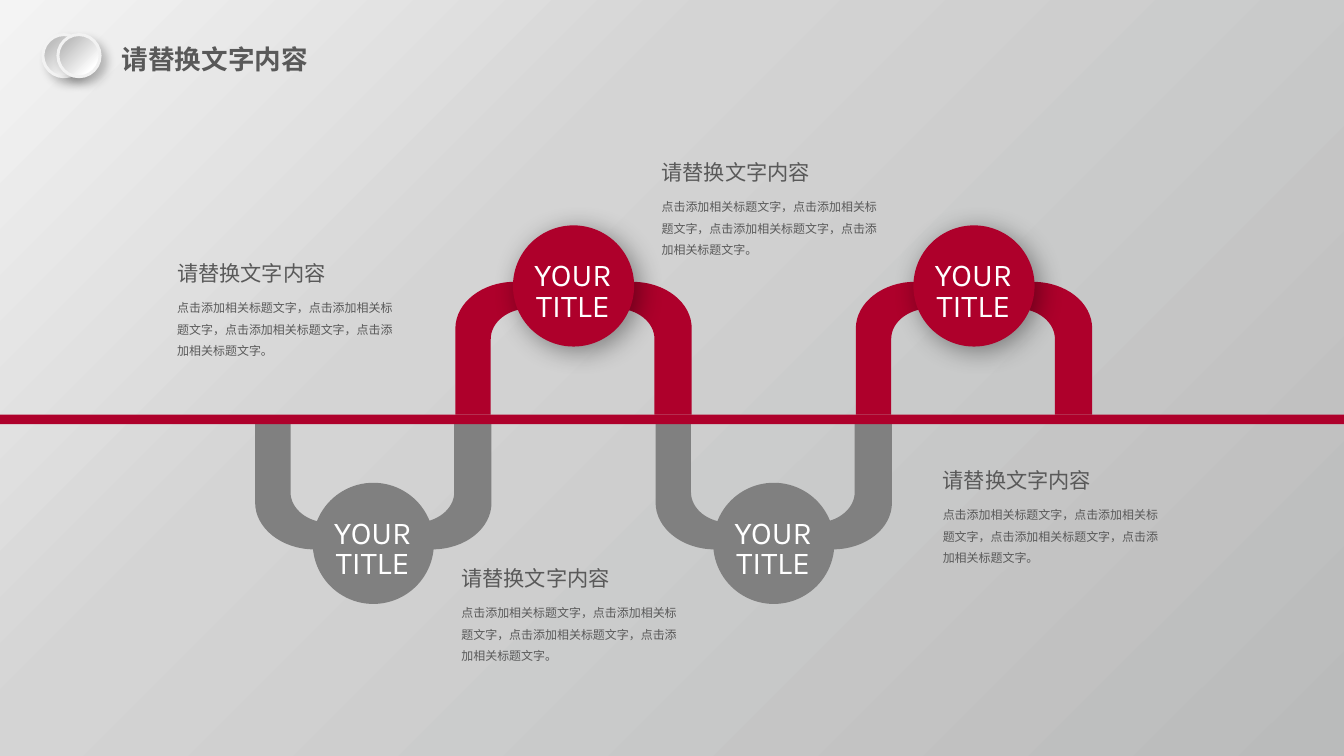
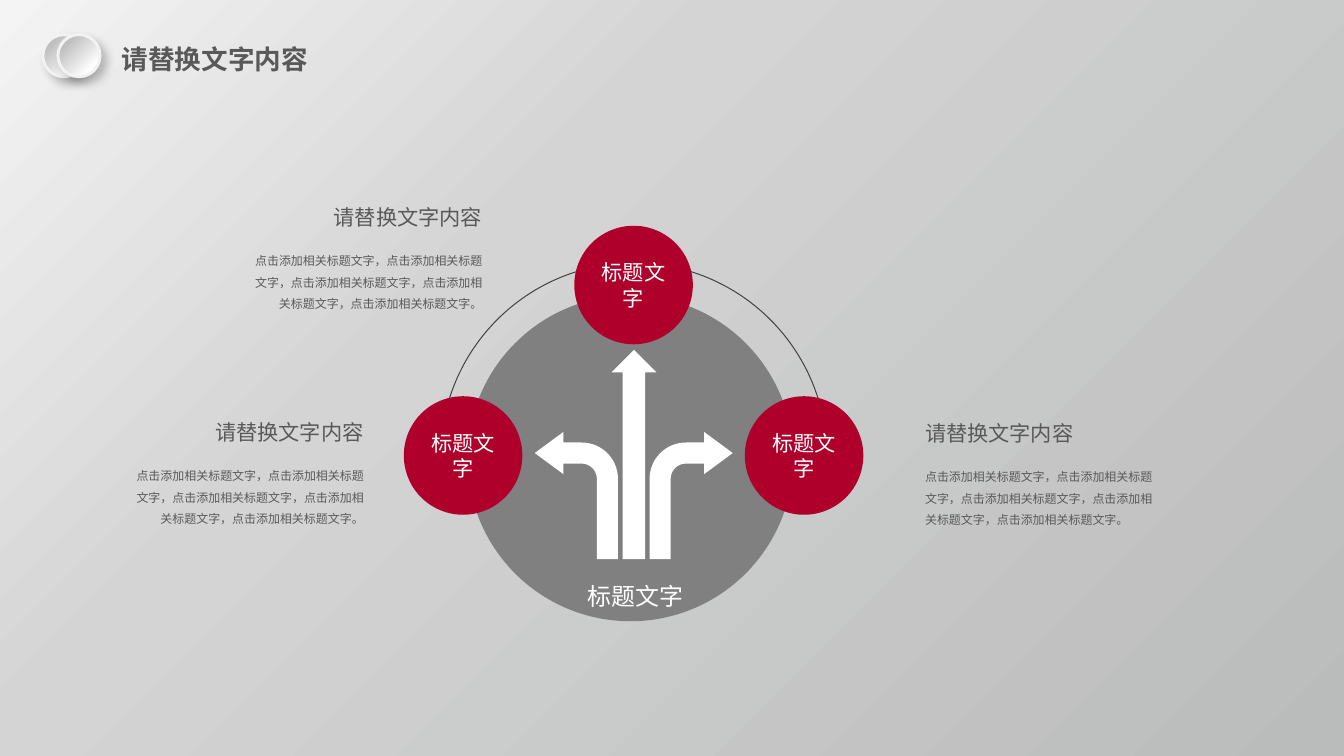
from pptx import Presentation
from pptx.dml.color import RGBColor
from pptx.enum import shapes, text
from pptx.oxml import ns
from pptx import util as u
from lxml import etree

Cm = u.Cm
RED, GREY, WHITE, INK = "AE002B", "808080", "FFFFFF", "595959"
CJK_FONT = "Noto Sans CJK SC"
HEADING = "请替换文字内容"
PHRASE = "点击添加相关标题文字"
WIDTH, HEIGHT = 35.71, 20.09
LEFT, CENTER, RIGHT = text.PP_ALIGN.LEFT, text.PP_ALIGN.CENTER, text.PP_ALIGN.RIGHT
BACKDROP = [(0, "F4F4F4"), (35, "D4D4D4"), (100, "BABBBB")]
METAL = [(20, "BFBFBF"), (80, WHITE), (100, WHITE)]

# Outlines in cm from an origin: two numbers make a line, six a Bezier curve
U_PIPE = [(0, 0), (0.94, 0), (0.94, 2.01), (0.94, 2.46, 1.4, 2.82, 1.96, 2.82),
          (4.27, 2.82), (4.83, 2.82, 5.29, 2.46, 5.29, 2.01), (5.29, 0),
          (6.28, 0), (6.28, 2.29), (6.28, 2.97, 5.59, 3.53, 4.7, 3.53),
          (1.57, 3.53), (0.71, 3.53, 0, 2.97, 0, 2.29)]
BENT_ARROW = [(0, 0), (0, -2.13), (0, -2.67, 0.43, -3.1, 0.97, -3.1),
              (1.45, -3.1), (1.45, -3.38), (2.21, -2.82), (1.45, -2.26),
              (1.45, -2.54), (0.97, -2.54),
              (0.74, -2.54, 0.56, -2.36, 0.56, -2.13), (0.56, 0), (0, 0)]
HALF_ROUND = [(0, -5.13), (2.83, -5.13, 5.13, -2.83, 5.13, 0), (-5.13, 0),
              (-5.13, -2.83, -2.83, -5.13, 0, -5.13)]


# Formatting
def color(code):
    return RGBColor.from_string(code)


def assign(target, values):
    for name, value in values.items():
        setattr(target, name, value)


def add_node(parent, tag, **attributes):
    node = etree.SubElement(parent, ns.qn(tag))
    for name, value in attributes.items():
        node.set(name, str(value))
    return node


def apply_gradient(fill, element, stops):
    fill.gradient()
    fill.gradient_angle = 315
    stop_list = element.find(".//" + ns.qn("a:gsLst"))
    for stop in list(stop_list):
        stop_list.remove(stop)
    for position, code in stops:
        stop = add_node(stop_list, "a:gs", pos=position * 1000)
        add_node(stop, "a:srgbClr", val=code)


def add_shadow(shape, alpha, blur, distance):
    effects = shape._element.spPr.find(ns.qn("a:effectLst"))
    outer = add_node(effects, "a:outerShdw", blurRad=u.Pt(blur), dist=u.Pt(distance),
                     dir=45 * 60000, algn="tl", rotWithShape=0)
    tint = add_node(outer, "a:srgbClr", val="000000")
    add_node(tint, "a:alpha", val=alpha * 1000)


def dress(shape, fill=None, line=None):
    shape.shadow.inherit = False
    if fill:
        shape.fill.solid()
        shape.fill.fore_color.rgb = color(fill)
    else:
        shape.fill.background()
    if line:
        shape.line.color.rgb = color(line[0])
        shape.line.width = u.Pt(line[1])
    else:
        shape.line.fill.background()
    return shape


def write(frame, words, size, font, code, align=LEFT, spacing=None, bold=False, **layout):
    assign(frame, {"word_wrap": True, "vertical_anchor": text.MSO_ANCHOR.TOP, **layout})
    para = frame.paragraphs[0]
    assign(para, {"alignment": align, "line_spacing": spacing})
    span = para.add_run()
    span.text = words
    assign(span.font, {"size": u.Pt(size), "name": font, "bold": bold})
    span.font.color.rgb = color(code)
    add_node(span._r.get_or_add_rPr(), "a:ea", typeface=CJK_FONT)


# Elements
def add_preset(page, kind, left, top, width, height, fill=None, line=None):
    shape = page.shapes.add_shape(kind, Cm(left), Cm(top), Cm(width), Cm(height))
    return dress(shape, fill, line)


def add_disc(page, left, top, size, fill=None, line=None):
    return add_preset(page, shapes.MSO_SHAPE.OVAL, left, top, size, size, fill, line)


def add_text(page, left, top, width, height, *words, **style):
    box = page.shapes.add_textbox(Cm(left), Cm(top), Cm(width), Cm(height))
    write(box.text_frame, *words, **style)


def add_outline(page, parts, left, top, flip_x=1, flip_y=1, **look):
    # Each part becomes a list of points on the slide
    placed = [[(Cm(left + flip_x * x), Cm(top + flip_y * y))
               for x, y in zip(part[::2], part[1::2])] for part in parts]
    builder = page.shapes.build_freeform(*placed[0][0])
    builder.add_line_segments([points[-1] for points in placed[1:]], close=True)
    shape = builder.convert_to_shape()
    # Turn the segments with control points into curves
    segments = list(shape._element.iter(ns.qn("a:lnTo")))
    for segment, points in zip(segments, placed[1:]):
        if len(points) == 3:
            curve = etree.Element(ns.qn("a:cubicBezTo"))
            for x, y in points:
                add_node(curve, "a:pt", x=x - shape.left, y=y - shape.top)
            segment.getparent().replace(segment, curve)
    return dress(shape, **look)


def add_note(page, edge, top, width, gap, phrases, font, align=LEFT):
    def start(size):
        return edge - size if align == RIGHT else edge

    grow = {"auto_size": text.MSO_AUTO_SIZE.SHAPE_TO_FIT_TEXT, "align": align}
    body = "，".join([PHRASE] * phrases) + "。"
    add_text(page, start(width), top + gap, width, 1.98, body, 9, font, INK,
             spacing=1.5, **grow)
    add_text(page, start(4.5), top, 4.5, 0.94, HEADING, 16, "Calibri", INK,
             word_wrap=False, **grow)


def add_page(deck):
    page = deck.slides.add_slide(deck.slide_layouts[5])
    title = page.shapes.title
    assign(title, {"left": Cm(2.98), "top": Cm(1.02), "width": Cm(5.51), "height": Cm(1.12)})
    write(title.text_frame, HEADING, 20, "Calibri", INK, bold=True, word_wrap=False,
          auto_size=text.MSO_AUTO_SIZE.SHAPE_TO_FIT_TEXT)
    for left in (1.14, 1.54):
        button = add_disc(page, left, 0.92, 1.12, line=("F2F2F2", 2.25))
        apply_gradient(button.fill, button._element.spPr, METAL)
        add_shadow(button, 23, 7, 5.9)
    return page


# Slides
def build_timeline(deck):
    page = add_page(deck)
    for index in range(4):
        left = 6.78 + 5.32 * index
        raised = index % 2 == 1
        fill = RED if raised else GREY
        disc_top = 5.99 if raised else 12.83
        add_outline(page, U_PIPE, left, 11.02 if raised else 11.07,
                    flip_y=-1 if raised else 1, fill=fill)
        disc = add_disc(page, left + 1.53, disc_top, 3.22, fill)
        if raised:
            add_shadow(disc, 40, 20, 5)
        add_text(page, left + 1.74, disc_top + 0.86, 2.77, 1.9, "YOUR TITLE", 24,
                 "Karla", WHITE, align=CENTER, spacing=0.8,
                 auto_size=text.MSO_AUTO_SIZE.SHAPE_TO_FIT_TEXT)
    add_preset(page, shapes.MSO_SHAPE.RECTANGLE, 0, 11.02, WIDTH, 0.25, RED)
    for left, top in ((4.46, 6.79), (12.01, 14.9), (17.33, 4.11), (24.8, 12.3)):
        add_note(page, left, top, 6.48, 0.88, 4, CJK_FONT)


def build_directions(deck):
    page = add_page(deck)
    # Hub with three arrows
    add_outline(page, HALF_ROUND, 16.84, 12.12, line=("404040", 0.75))
    add_disc(page, 12.42, 7.85, 8.66, GREY)
    add_preset(page, shapes.MSO_SHAPE.UP_ARROW, 16.25, 9.3, 1.19, 5.56, WHITE)
    for foot, direction in ((17.26, 1), (16.42, -1)):
        add_outline(page, BENT_ARROW, foot, 14.86, flip_x=direction, fill=WHITE)
    middle = {"align": CENTER, "vertical_anchor": text.MSO_ANCHOR.MIDDLE}
    add_text(page, 14.79, 15.08, 4.19, 1.45, "标题文字", 18, "Arial", WHITE,
             spacing=1.1, **middle)
    # Destinations
    no_margins = dict.fromkeys(
        ("margin_left", "margin_top", "margin_right", "margin_bottom"), 0)
    for left, top in ((10.73, 10.53), (19.79, 10.53), (15.26, 6)):
        disc = add_disc(page, left, top, 3.15, RED)
        write(disc.text_frame, "标题文字", 16, "Arial", WHITE, **middle, **no_margins)
    for edge, top, align in ((24.33, 11.05, LEFT), (13.06, 5.31, RIGHT), (9.91, 11.02, RIGHT)):
        add_note(page, edge, top, 6.55, 1.12, 5, "Arial", align)


def main():
    deck = Presentation()
    assign(deck, {"slide_width": Cm(WIDTH), "slide_height": Cm(HEIGHT)})
    master = deck.slide_master
    apply_gradient(master.background.fill, master._element, BACKDROP)
    build_timeline(deck)
    build_directions(deck)
    deck.save("out.pptx")


if __name__ == "__main__":
    main()
